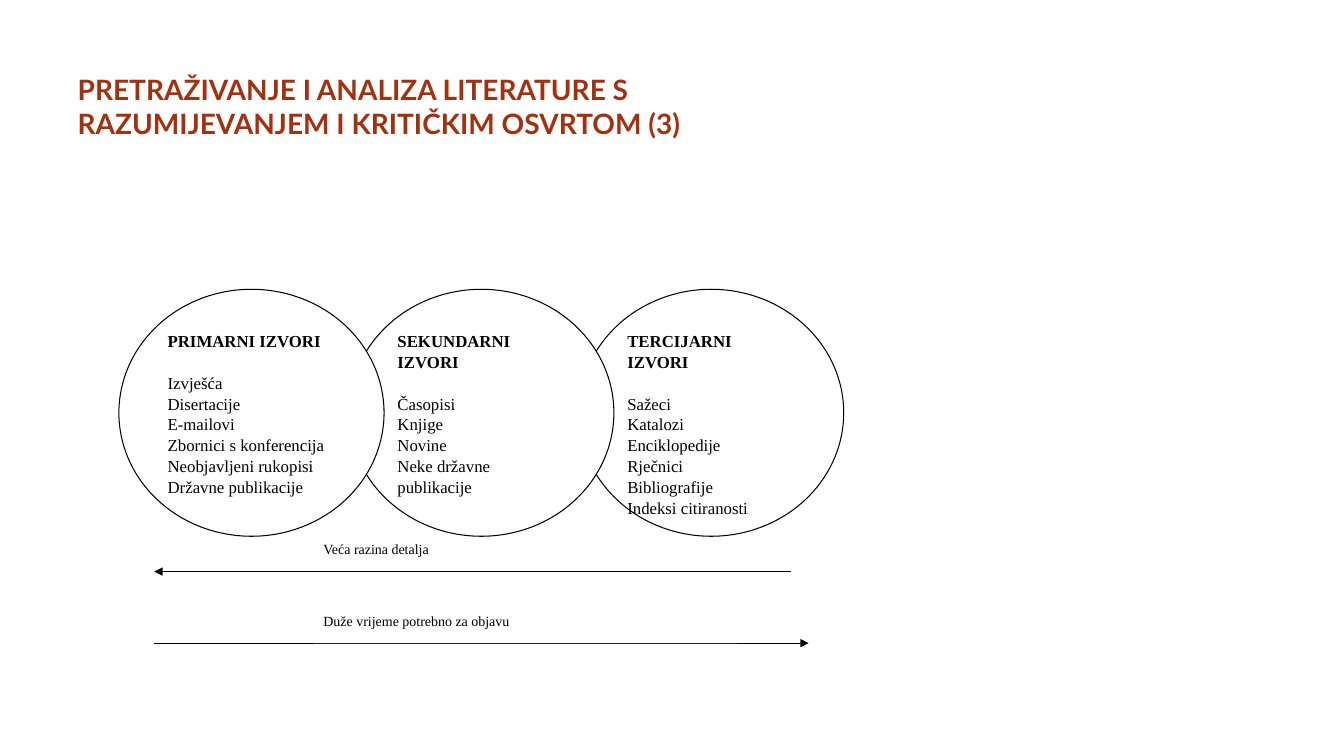
from dataclasses import dataclass

from lxml.etree import SubElement
from pptx import Presentation
from pptx.dml.color import RGBColor
from pptx.enum.shapes import MSO_CONNECTOR, MSO_SHAPE
from pptx.enum.text import MSO_ANCHOR, MSO_AUTO_SIZE, PP_ALIGN
from pptx.oxml.ns import qn
from pptx.slide import Slide
from pptx.text.text import TextFrame, _Paragraph as Paragraph
from pptx.util import Inches, Pt

RUST = RGBColor(0xA5, 0x30, 0x0F)
BLACK = RGBColor(0x00, 0x00, 0x00)
WHITE = RGBColor(0xFF, 0xFF, 0xFF)

SLIDE_WIDTH, SLIDE_HEIGHT = Inches(13.33), Inches(7.5)
TITLE_FONT, BODY_FONT = "Lato", "Times New Roman"
LINE_WIDTH = Pt(0.75)
CIRCLE_LEFT, CIRCLE_TOP, CIRCLE_STEP = 8.85, 38.27, 17.1
CIRCLE_WIDTH, CIRCLE_HEIGHT = 19.73, 32.67
LABEL_LEFT, LABEL_WIDTH, LABEL_HEIGHT = 23.33, 31.58, 4.72

TITLE = "PRETRAŽIVANJE I ANALIZA LITERATURE S RAZUMIJEVANJEM I KRITIČKIM OSVRTOM (3)"


@dataclass(frozen=True)
class SourceGroup:
    """A kind of literature source with its examples."""

    heading: str
    examples: tuple[str, ...]


@dataclass(frozen=True)
class Trend:
    """A labelled arrow, placed in percent of the slide's size."""

    label: str
    start: float
    end: float
    height: float


SOURCE_GROUPS = (
    SourceGroup("PRIMARNI IZVORI", (
        "Izvješća", "Disertacije", "E-mailovi", "Zbornici s konferencija",
        "Neobjavljeni rukopisi", "Državne publikacije")),
    SourceGroup("SEKUNDARNI IZVORI", (
        "Časopisi", "Knjige", "Novine", "Neke državne publikacije")),
    SourceGroup("TERCIJARNI IZVORI", (
        "Sažeci", "Katalozi", "Enciklopedije", "Rječnici", "Bibliografije",
        "Indeksi citiranosti")),
)
DETAIL = Trend("Veća razina detalja", 58.89, 11.48, 75.6)
PUBLISHING_TIME = Trend("Duže vrijeme potrebno za objavu", 11.48, 60.17, 85.07)


def across(percent: float) -> int:
    """Turn a percentage of the slide's width into a length."""
    return round(SLIDE_WIDTH * percent / 100)


def down(percent: float) -> int:
    """Turn a percentage of the slide's height into a length."""
    return round(SLIDE_HEIGHT * percent / 100)


def prepare_frame(frame: TextFrame) -> None:
    """Wrap the text and start it at the top."""
    frame.word_wrap = True
    frame.auto_size = MSO_AUTO_SIZE.NONE
    frame.vertical_anchor = MSO_ANCHOR.TOP


def style_paragraph(paragraph: Paragraph, name: str, size: int,
                    color: RGBColor, bold: bool = False) -> None:
    """Align a paragraph to the left and set its font."""
    paragraph.alignment = PP_ALIGN.LEFT
    paragraph.font.name = name
    paragraph.font.size = Pt(size)
    paragraph.font.bold = bold
    paragraph.font.color.rgb = color


def fill_title(slide: Slide) -> None:
    """Place and format the slide title."""
    title = slide.shapes.title
    title.left, title.top = across(5.03), down(8.93)
    title.width, title.height = across(52.06), down(19.2)
    title.text_frame.text = TITLE
    prepare_frame(title.text_frame)
    style_paragraph(title.text_frame.paragraphs[0], TITLE_FONT, 20, RUST, bold=True)


def add_circle(slide: Slide, column: int, group: SourceGroup) -> None:
    """Draw one group of sources as an ellipse with its list."""
    circle = slide.shapes.add_shape(
        MSO_SHAPE.OVAL, across(CIRCLE_LEFT + column * CIRCLE_STEP), down(CIRCLE_TOP),
        across(CIRCLE_WIDTH), down(CIRCLE_HEIGHT))
    circle.shadow.inherit = False
    circle.fill.solid()
    circle.fill.fore_color.rgb = WHITE
    circle.line.color.rgb = BLACK
    circle.line.width = LINE_WIDTH
    frame = circle.text_frame
    frame.text = "\n".join((group.heading, *group.examples))
    prepare_frame(frame)
    for index, paragraph in enumerate(frame.paragraphs):
        style_paragraph(paragraph, BODY_FONT, 12, BLACK, bold=index == 0)
        paragraph.line_spacing = 1.04
    frame.paragraphs[1].space_before = Pt(14.4)


def add_label(slide: Slide, trend: Trend) -> None:
    """Write a trend's label directly above its arrow."""
    label = slide.shapes.add_textbox(
        across(LABEL_LEFT), down(trend.height - LABEL_HEIGHT),
        across(LABEL_WIDTH), down(LABEL_HEIGHT))
    label.fill.solid()
    label.fill.fore_color.rgb = WHITE
    label.text_frame.text = trend.label
    prepare_frame(label.text_frame)
    style_paragraph(label.text_frame.paragraphs[0], BODY_FONT, 10, BLACK)


def add_arrow(slide: Slide, trend: Trend) -> None:
    """Draw a trend's horizontal arrow."""
    arrow = slide.shapes.add_connector(
        MSO_CONNECTOR.STRAIGHT, across(trend.start), down(trend.height),
        across(trend.end), down(trend.height))
    arrow.line.color.rgb = BLACK
    arrow.line.width = LINE_WIDTH
    SubElement(arrow.line._get_or_add_ln(), qn("a:tailEnd"), type="triangle")
    SubElement(arrow._element.spPr, qn("a:effectLst"))


def main() -> None:
    """Build the slide and save it."""
    presentation = Presentation()
    presentation.slide_width, presentation.slide_height = SLIDE_WIDTH, SLIDE_HEIGHT
    slide = presentation.slides.add_slide(presentation.slide_layouts[5])
    fill_title(slide)
    add_label(slide, DETAIL)
    for column, group in reversed(tuple(enumerate(SOURCE_GROUPS))):
        add_circle(slide, column, group)
    add_arrow(slide, DETAIL)
    add_arrow(slide, PUBLISHING_TIME)
    add_label(slide, PUBLISHING_TIME)
    presentation.save("out.pptx")


if __name__ == "__main__":
    main()
